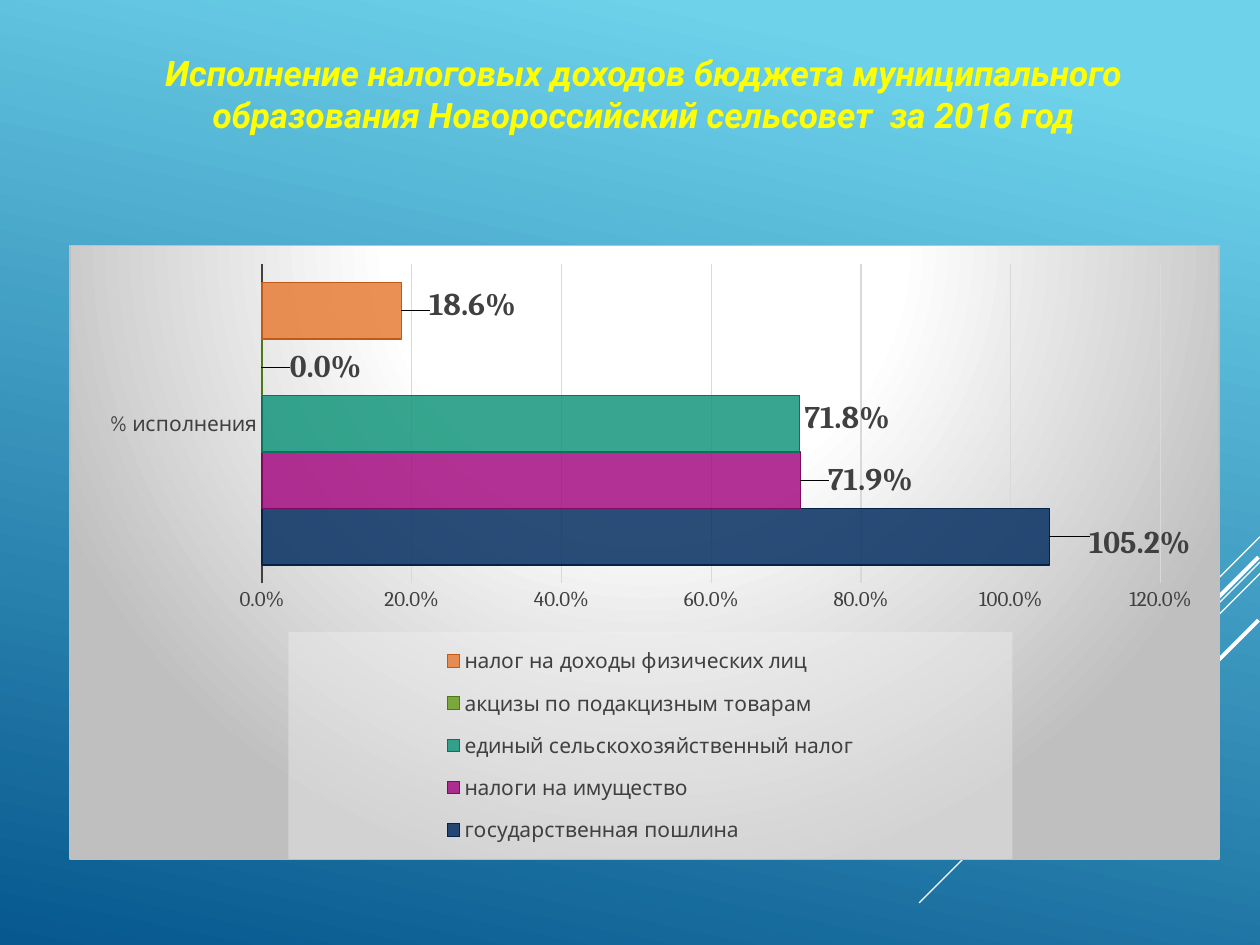
import pptx
import pptx.chart.data
import pptx.dml.color
import pptx.enum.chart
import pptx.enum.shapes
import pptx.enum.text
import pptx.oxml
import pptx.oxml.ns
import pptx.util
from pptx.util import Cm

NAMESPACES = pptx.oxml.ns.nsdecls("a", "c")
DARK_GRAY = "404040"
SERIES = [
    ("государственная пошлина", 1.052, "052F61", "042349", (0.03, 0.01)),
    ("налоги на имущество", 0.719, "A50E82", "7C0B61", (0.02, 0)),
    ("единый сельскохозяйственный налог", 0.718, "14967C", "0F705D", (0, -0.01)),
    ("акцизы по подакцизным товарам", 0, "6A9E1F", "4F7717", (0.02, 0)),
    ("налог на доходы физических лиц", 0.186, "E87D37", "C15A16", (0.02, -0.01)),
]


def color(value):
    return pptx.dml.color.RGBColor.from_string(value)


def set_font(font, name, size, value, bold=False, italic=False):
    font.name = name
    font.size = pptx.util.Pt(size)
    font.color.rgb = color(value)
    font.bold = bold
    font.italic = italic


def set_line(line, value, width):
    line.color.rgb = color(value)
    line.width = pptx.util.Pt(width)


def layout_element(content):
    return pptx.oxml.parse_xml(
        f"<c:layout {NAMESPACES}><c:manualLayout>{content}</c:manualLayout></c:layout>"
    )


def box_layout(left, top, width, height, target=""):
    return layout_element(
        f'{target}<c:xMode val="edge"/><c:yMode val="edge"/>'
        f'<c:x val="{left}"/><c:y val="{top}"/><c:w val="{width}"/><c:h val="{height}"/>'
    )


def set_background(slide):
    fill = slide.background.fill
    fill.gradient()
    fill.gradient_angle = 258
    stops = [(0.1, "6ED2EB"), (1, "06588E")]
    for stop, (position, value) in zip(fill.gradient_stops, stops):
        stop.position = position
        stop.color.rgb = color(value)


def add_diagonal_lines(slide, left, top):
    lines = [
        (0, 0, 2.11, 0.75),
        (0, 0.51, 6.87, 0.75),
        (0, 0.74, 4.37, 0.75),
        (-0.03, 0.41, 3.99, 2.25),
        (-0.03, 1.68, 2.9, 2.25),
    ]
    for x, y, reach, width in lines:
        connector = slide.shapes.add_connector(
            pptx.enum.shapes.MSO_CONNECTOR.STRAIGHT,
            Cm(left + x), Cm(top + y), Cm(left + x - reach), Cm(top + y + reach),
        )
        set_line(connector.line, "FFFFFF", width)
        properties = connector.element.find(pptx.oxml.ns.qn("p:spPr"))
        properties.append(pptx.oxml.parse_xml(f"<a:effectLst {NAMESPACES}/>"))


def fill_title(slide, left, top, width, height):
    title = slide.shapes.title
    title.left, title.top, title.width, title.height = map(Cm, (left, top, width, height))
    frame = title.text_frame
    frame.text = (
        "Исполнение налоговых доходов бюджета муниципального "
        "образования Новороссийский сельсовет  за 2016 год"
    )
    frame.word_wrap = True
    frame.vertical_anchor = pptx.enum.text.MSO_ANCHOR.TOP
    paragraph = frame.paragraphs[0]
    paragraph.alignment = pptx.enum.text.PP_ALIGN.CENTER
    set_font(paragraph.font, "Roboto", 20, "FFFF00", bold=True, italic=True)


def style_series(series, fill_color, line_color, label_offset):
    series.format.fill.solid()
    series.format.fill.fore_color.rgb = color(fill_color)
    set_line(series.format.line, line_color, 0.75)
    series_fill = next(series.format.fill._xPr.iter(pptx.oxml.ns.qn("a:srgbClr")))
    series_fill.append(pptx.oxml.parse_xml(f'<a:alpha {NAMESPACES} val="85000"/>'))

    labels = series.data_labels
    labels.show_value = True
    labels.number_format = "0.0%"
    labels.number_format_is_linked = False
    point_label = series.points[0].data_label
    point_label.position = pptx.enum.chart.XL_LABEL_POSITION.OUTSIDE_END
    for label in (labels, point_label):
        set_font(label.font, "Cambria", 18, DARK_GRAY, bold=True)
    x, y = label_offset
    index = next(series._element.iter(pptx.oxml.ns.qn("c:dLbl")))[0]
    index.addnext(layout_element(f'<c:x val="{x}"/><c:y val="{y}"/>'))


def style_axes(chart):
    category_axis, value_axis = chart.category_axis, chart.value_axis
    for axis, font_name in ((category_axis, "Quicksand"), (value_axis, "Cambria")):
        axis.major_tick_mark = pptx.enum.chart.XL_TICK_MARK.NONE
        axis.minor_tick_mark = pptx.enum.chart.XL_TICK_MARK.NONE
        set_font(axis.tick_labels.font, font_name, 12, DARK_GRAY)
    set_line(category_axis.format.line, DARK_GRAY, 1.5)
    value_axis.format.line.fill.background()
    value_axis.minimum_scale = 0
    value_axis.maximum_scale = 1.2
    value_axis.major_unit = 0.2
    value_axis.tick_labels.number_format = "0.0%"
    value_axis.tick_labels.number_format_is_linked = False
    value_axis.has_major_gridlines = True
    set_line(value_axis.major_gridlines.format.line, "D9D9D9", 0.75)


def style_legend(chart):
    chart.has_legend = True
    legend = chart.legend
    legend.position = pptx.enum.chart.XL_LEGEND_POSITION.BOTTOM
    legend.include_in_layout = False
    set_font(legend.font, "Quicksand", 12, DARK_GRAY)
    element = next(chart.element.iter(pptx.oxml.ns.qn("c:legend")))
    for old_layout in element.findall(pptx.oxml.ns.qn("c:layout")):
        element.remove(old_layout)
    element.find(pptx.oxml.ns.qn("c:legendPos")).addnext(box_layout(0.19, 0.63, 0.63, 0.37))
    element.find(pptx.oxml.ns.qn("c:overlay")).addnext(pptx.oxml.parse_xml(
        f'<c:spPr {NAMESPACES}><a:solidFill><a:srgbClr val="F2F2F2">'
        '<a:alpha val="39000"/></a:srgbClr></a:solidFill></c:spPr>'
    ))


def style_chart_area(chart):
    stops = "".join(
        f'<a:gs pos="{position}"><a:srgbClr val="{value}"/></a:gs>'
        for position, value in ((0, "FFFFFF"), (39000, "FFFFFF"), (100000, "BFBFBF"))
    )
    chart.element.find(pptx.oxml.ns.qn("c:chart")).addnext(pptx.oxml.parse_xml(
        f'<c:spPr {NAMESPACES}><a:gradFill><a:gsLst>{stops}</a:gsLst><a:path path="circle">'
        '<a:fillToRect l="50000" t="-80000" r="50000" b="180000"/></a:path></a:gradFill>'
        '<a:ln w="9525"><a:solidFill><a:srgbClr val="BFBFBF"/></a:solidFill></a:ln></c:spPr>'
    ))
    plot_area = next(chart.element.iter(pptx.oxml.ns.qn("c:plotArea")))
    for old_layout in plot_area.findall(pptx.oxml.ns.qn("c:layout")):
        plot_area.remove(old_layout)
    target = '<c:layoutTarget val="inner"/>'
    plot_area.insert(0, box_layout(0.167, 0.031, 0.782, 0.52, target))


def add_tax_chart(slide, left, top, width, height):
    chart_data = pptx.chart.data.CategoryChartData(number_format="0.0%")
    chart_data.categories = ["% исполнения"]
    for name, value, *_ in SERIES:
        chart_data.add_series(name, [value])
    chart = slide.shapes.add_chart(
        pptx.enum.chart.XL_CHART_TYPE.BAR_CLUSTERED,
        Cm(left), Cm(top), Cm(width), Cm(height), chart_data,
    ).chart
    chart.has_title = False
    set_font(chart.font, "Quicksand", 10, "FFFFFF")
    plot = chart.plots[0]
    plot.gap_width = 65
    plot.vary_by_categories = False
    for series, (_, _, fill_color, line_color, offset) in zip(plot.series, SERIES):
        style_series(series, fill_color, line_color, offset)
    style_axes(chart)
    style_legend(chart)
    style_chart_area(chart)


def main():
    presentation = pptx.Presentation()
    presentation.slide_width = Cm(25.4)
    presentation.slide_height = Cm(19.05)
    slide = presentation.slides.add_slide(presentation.slide_layouts[5])
    set_background(slide)
    add_diagonal_lines(slide, 25.4, 10.82)
    fill_title(slide, 1.73, 0.91, 22.5, 2.82)
    add_tax_chart(slide, 1.4, 4.93, 23.19, 12.4)
    presentation.save("out.pptx")


if __name__ == "__main__":
    main()
